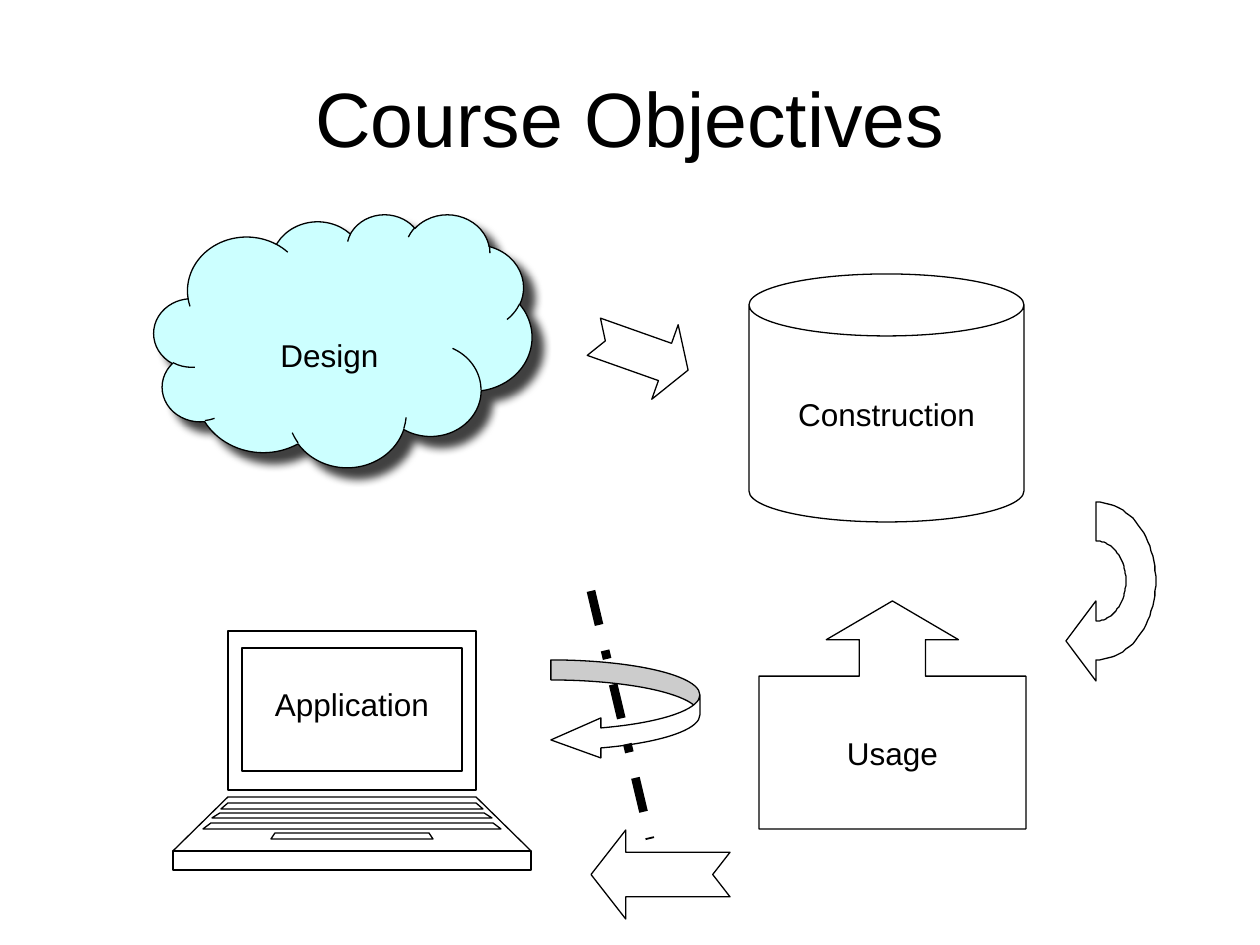
import math

from lxml import etree
from pptx import Presentation
from pptx import util as u
from pptx.dml.color import RGBColor
from pptx.enum import dml, shapes, text
from pptx.oxml import parse_xml
from pptx.oxml.ns import nsdecls, qn

PX = 914400 / 126  # EMU in one px
BLACK = RGBColor(0x00, 0x00, 0x00)
WHITE = RGBColor(0xFF, 0xFF, 0xFF)
PALE_CYAN = RGBColor(0xCC, 0xFF, 0xFF)
FONT = "Arial"
KIND = shapes.MSO_SHAPE


def px(n):
    return u.Emu(round(n * PX))


def set_text(sp, words, size=18, top=0, anchor=text.MSO_ANCHOR.MIDDLE):
    tf = sp.text_frame
    tf.text = words
    tf.vertical_anchor = anchor
    tf.margin_left = tf.margin_right = tf.margin_bottom = 0
    tf.margin_top = px(top)
    p = tf.paragraphs[0]
    p.alignment = text.PP_ALIGN.CENTER
    font = p.runs[0].font
    font.name, font.size, font.color.rgb = FONT, u.Pt(size), BLACK


def style(sp, fill=WHITE):
    sp.shadow.inherit = False
    sp.fill.solid()
    sp.fill.fore_color.rgb = fill
    sp.line.color.rgb = BLACK
    sp.line.width = u.Pt(0.75)
    return sp


def add_preset(s, kind, box, adj=(), rotation=0, fill=WHITE):
    sp = style(s.shapes.add_shape(kind, *map(px, box)), fill)
    for i, value in enumerate(adj):
        sp.adjustments[i] = value
    sp.rotation = rotation
    return sp


def add_outline(s, left, top, contours):
    """Draw closed contours whose points are relative to (left, top)."""
    fb = s.shapes.build_freeform(*contours[0][0], scale=PX)
    for i, points in enumerate(contours):
        if i:
            fb.move_to(*points[0])
        fb.add_line_segments(points[1:], close=True)
    return style(fb.convert_to_shape(px(left), px(top)))


def add_title(s, box):
    sp = s.shapes.title
    sp.left, sp.top, sp.width, sp.height = map(px, box)
    set_text(sp, "Course Objectives", 44)


def add_cloud(s, box):
    sp = add_preset(s, KIND.CLOUD, box, fill=PALE_CYAN)
    effects = sp._element.spPr.find(qn("a:effectLst"))
    effects.append(parse_xml(
        f'<a:outerShdw {nsdecls("a")} blurRad="63500" dist="107950" dir="2700000">'
        '<a:srgbClr val="000000"><a:alpha val="75000"/></a:srgbClr></a:outerShdw>'))
    set_text(sp, "Design", top=40)


def add_laptop(s, left, top, width):
    mid = width / 2
    # Each part is a symmetric band: top y, bottom y, half width at top and bottom
    bands = [
        (0, 159, 124, 124),     # lid
        (166, 220, 124, mid),   # deck
        (220, 239, mid, mid),   # front edge
        (17, 140, 110, 110),    # screen
        (172, 178, 124, 131),   # key rows
        (182, 187, 132, 140),
        (192, 198, 141, 149),
        (202, 208, 77, 81),     # space bar
    ]
    sp = add_outline(s, left, top, [
        [(mid - a, y1), (mid + a, y1), (mid + b, y2), (mid - b, y2)]
        for y1, y2, a, b in bands])
    set_text(sp, "Application", top=54, anchor=text.MSO_ANCHOR.TOP)


def half_ellipse(cx, cy, rx, ry, steps=48):
    """Points down the right half of an ellipse."""
    angles = [math.pi * (i / steps - 0.5) for i in range(steps + 1)]
    return [(cx + rx * math.cos(a), cy + ry * math.sin(a)) for a in angles]


def add_bent_arrow(s, left, top):
    cx, cy = 30, 79
    head = [(cx, 179), (0, 139), (cx, 99)]
    inner = half_ellipse(cx, cy, 30, 40)[::-1]
    add_outline(s, left, top, [half_ellipse(cx, cy, 60, 79) + head + inner])


def add_turn_axis(s, box, start, end):
    # Arrow curling around a dashed axis
    sp = add_preset(s, KIND.CURVED_RIGHT_ARROW, box, (0.2, 0.4, 0.5))
    sp._element.spPr.find(qn("a:xfrm")).set("flipH", "1")
    axis = s.shapes.add_connector(
        shapes.MSO_CONNECTOR.STRAIGHT, *map(px, start + end))
    axis.line.color.rgb = BLACK
    axis.line.width = u.Pt(5)
    axis.line.dash_style = dml.MSO_LINE.DASH_DOT
    etree.SubElement(axis._element.spPr, qn("a:effectLst"))


def main():
    prs = Presentation()
    prs.slide_width, prs.slide_height = u.Inches(10), u.Inches(7.5)
    s = prs.slides.add_slide(prs.slide_layouts[5])
    add_title(s, (63, 38, 1134, 157))

    # Stages of the course
    add_cloud(s, (154, 214, 378, 253))
    set_text(add_preset(s, KIND.CAN, (749, 274, 275, 248), [0.25]), "Construction")
    add_laptop(s, 173, 631, 358)
    usage = add_preset(s, KIND.UP_ARROW_CALLOUT, (759, 601, 267, 228),
                       (0.29, 0.29, 0.17, 0.67))
    set_text(usage, "Usage")

    # Arrows between the stages
    notched = KIND.NOTCHED_RIGHT_ARROW
    add_preset(s, notched, (591, 314, 100, 79), (0.5, 0.31), 19.5)
    add_bent_arrow(s, 1066, 502)
    add_preset(s, notched, (591, 830, 139, 89), (0.5, 0.39), 180)
    add_turn_axis(s, (551, 660, 149, 100), (591, 591), (650, 839))

    prs.save("out.pptx")


if __name__ == "__main__":
    main()
